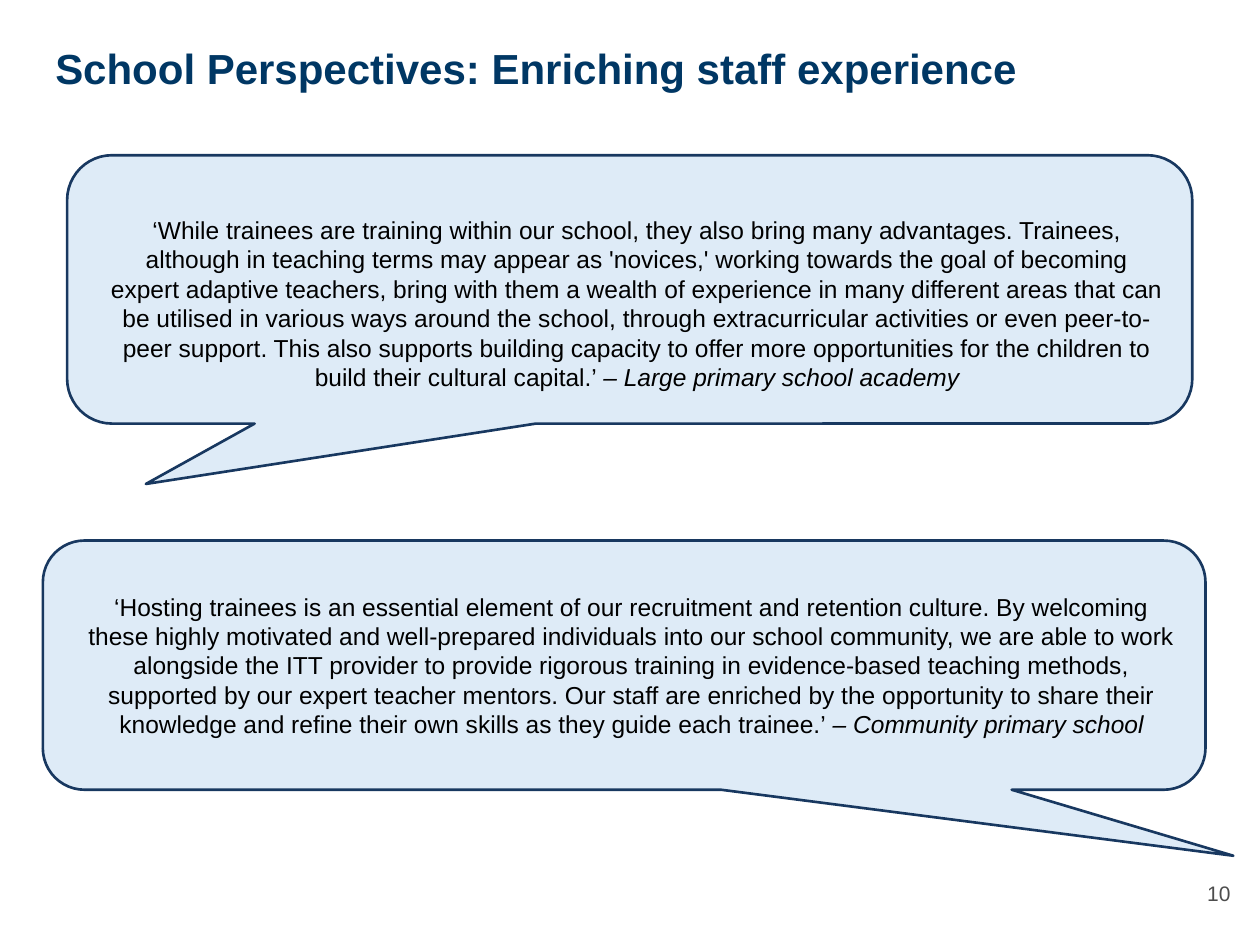
from pptx import Presentation
from pptx.dml.color import RGBColor
from pptx.enum.shapes import MSO_SHAPE
from pptx.enum.text import MSO_ANCHOR, PP_ALIGN
from pptx.util import Inches, Pt

HUE = {"title": "003764", "page": "4D4D4D", "text": "000000",
       "fill": "DEEBF7", "line": "183860"}

deck = Presentation()
deck.slide_width, deck.slide_height = Inches(10), Inches(7.5)
slide = deck.slides.add_slide(deck.slide_layouts[6])


def place(left, top, width, height):
    """Turn percentages of the slide into lengths."""
    wide, high = deck.slide_width / 100, deck.slide_height / 100
    return [round(n) for n in (left * wide, top * high, width * wide, height * high)]


def write(shape, runs, size, hue, align, anchor, head=0.1, side=0.1):
    """Fill a shape with one paragraph of (text, bold, italic) runs."""
    frame = shape.text_frame
    frame.word_wrap = True
    frame.vertical_anchor = anchor
    frame.margin_left = frame.margin_right = Inches(side)
    frame.margin_top, frame.margin_bottom = Inches(head), Inches(0.1)
    para = frame.paragraphs[0]
    para.alignment = align
    for text, bold, slant in runs:
        run = para.add_run()
        run.text = text
        font = run.font
        font.name, font.size = "Arial", Pt(size)
        font.bold, font.italic = bold, slant
        font.color.rgb = RGBColor.from_string(HUE[hue])
    return para


# Title
title = slide.shapes.add_textbox(*place(3.4, 3.73, 93.2, 13.33))
para = write(title, [("School Perspectives: Enriching staff experience", True, False)],
             24, "title", PP_ALIGN.LEFT, MSO_ANCHOR.TOP)
para.line_spacing = 0.9

# Quotes: place, tail, anchor, top and side margins, words, speaker
quotes = [
    ((5.33, 16.43, 89.3, 28.4), (-0.43, 0.725), MSO_ANCHOR.TOP, 0.37, 0.12,
     "‘While trainees are training within our school, they also bring many "
     "advantages. Trainees, although in teaching terms may appear as 'novices,' "
     "working towards the goal of becoming expert adaptive teachers, bring with "
     "them a wealth of experience in many different areas that can be utilised in "
     "various ways around the school, through extracurricular activities or even "
     "peer-to-peer support. This also supports building capacity to offer more "
     "opportunities for the children to build their cultural capital.’ ",
     "– Large primary school academy"),
    ((3.4, 57.2, 92.27, 26.37), (0.524, 0.765), MSO_ANCHOR.MIDDLE, 0.1, 0.1,
     "‘Hosting trainees is an essential element of our recruitment and retention "
     "culture. By welcoming these highly motivated and well-prepared individuals "
     "into our school community, we are able to work alongside the ITT provider to "
     "provide rigorous training in evidence-based teaching methods, supported by "
     "our expert teacher mentors. Our staff are enriched by the opportunity to "
     "share their knowledge and refine their own skills as they guide each "
     "trainee.’ ",
     "– Community primary school"),
]
for spot, tail, anchor, head, side, words, voice in quotes:
    quote = slide.shapes.add_shape(MSO_SHAPE.ROUNDED_RECTANGULAR_CALLOUT, *place(*spot))
    quote.adjustments[0], quote.adjustments[1] = tail
    quote.adjustments[2] = 0.167
    quote.shadow.inherit = False
    quote.fill.solid()
    quote.fill.fore_color.rgb = RGBColor.from_string(HUE["fill"])
    quote.line.color.rgb = RGBColor.from_string(HUE["line"])
    quote.line.width = Pt(1.5)
    para = write(quote, [(words, False, False), (voice, False, True)],
                 14, "text", PP_ALIGN.CENTER, anchor, head, side)
    # Left indent of the paragraph
    props = para._p.get_or_add_pPr()
    props.set("marL", str(Inches(0.12)))
    props.set("indent", "0")

# Page number
page = slide.shapes.add_textbox(*place(92.65, 90.67, 6, 7.6))
write(page, [("10", False, False)], 12, "page", PP_ALIGN.RIGHT, MSO_ANCHOR.MIDDLE)

deck.save("out.pptx")
